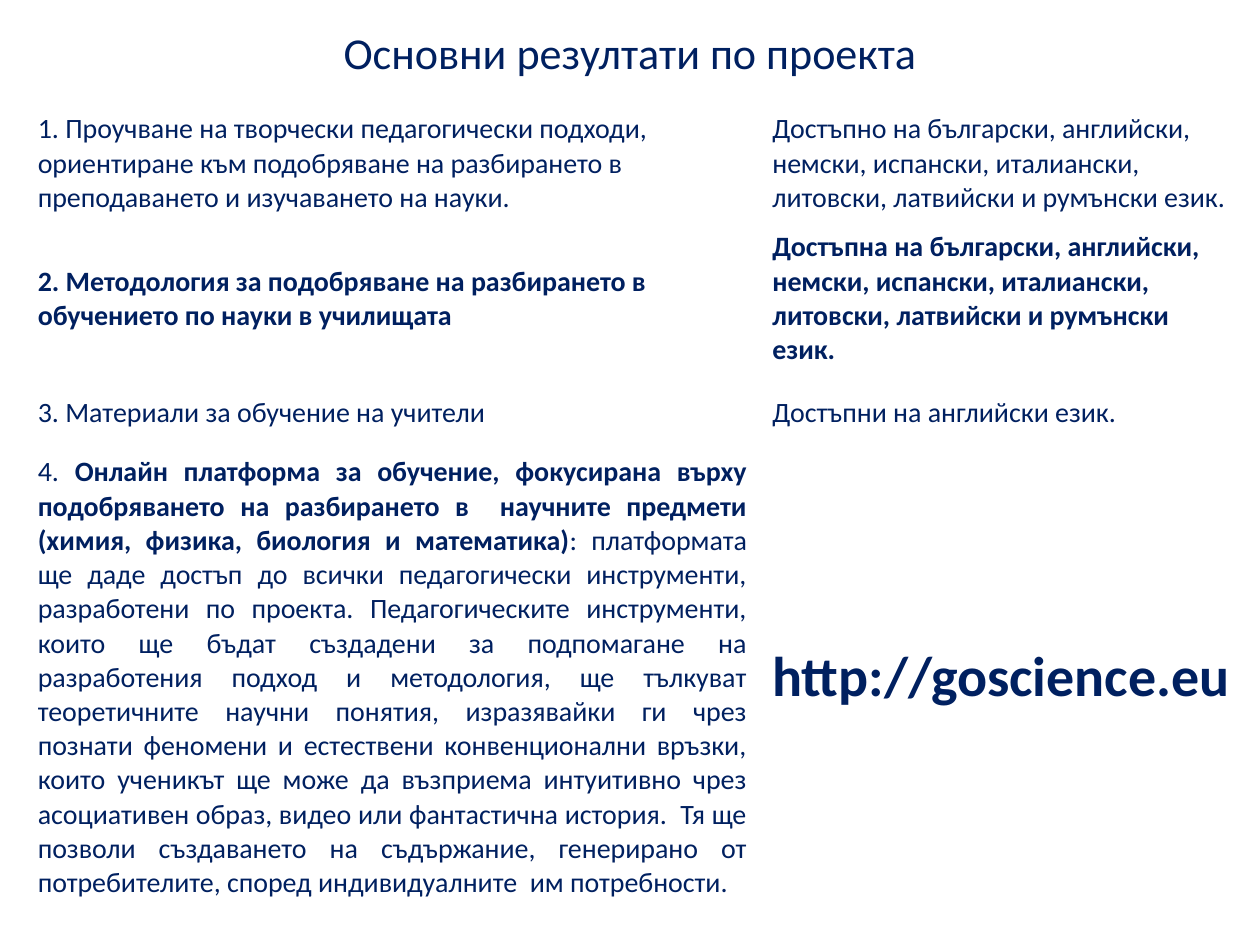
from pptx import Presentation
from pptx.dml.color import RGBColor
from pptx.enum.text import MSO_ANCHOR, PP_ALIGN
from pptx.util import Inches, Pt

NAVY = RGBColor(0x00, 0x20, 0x60)
MIDDLE = MSO_ANCHOR.MIDDLE
LEFT, CENTER, JUSTIFY = PP_ALIGN.LEFT, PP_ALIGN.CENTER, PP_ALIGN.JUSTIFY
WIDE, HIGH = Inches(10), Inches(7.5)
TITLE_ONLY = 5


def write(para, text, size=16, bold=False, align=LEFT):
    """Add one run of text to a paragraph."""
    para.alignment = align
    run = para.add_run()
    run.text = text
    font = run.font
    font.name, font.size, font.bold = "Calibri", Pt(size), bold
    font.color.rgb = NAVY


class Page:
    """Holds the slide; places are shares of its width and height."""

    def __init__(self, slide):
        self.slide = slide

    def frame(self, x, y, w, h):
        return int(x * WIDE), int(y * HIGH), int(w * WIDE), int(h * HIGH)

    def title(self, text, *place):
        box = self.slide.shapes.title
        box.left, box.top, box.width, box.height = self.frame(*place)
        box.text_frame.vertical_anchor = MIDDLE
        write(box.text_frame.paragraphs[0], text, size=25.2, align=CENTER)

    def table(self, rows, cols, highs, x, y):
        place = self.frame(x, y, sum(cols), sum(highs))
        grid = self.slide.shapes.add_table(len(rows), len(cols), *place).table
        grid.first_row = grid.horz_banding = False
        for col, share in zip(grid.columns, cols):
            col.width = int(share * WIDE)
        for row, share, cells in zip(grid.rows, highs, rows):
            row.height = int(share * HIGH)
            for cell, runs in zip(row.cells, cells):
                cell.fill.background()
                cell.vertical_anchor = MIDDLE
                for text, style in runs:
                    write(cell.text_frame.paragraphs[0], text, **style)


PLAIN, BOLD = {}, {"bold": True}
BLOCK = {"align": JUSTIFY}
TONGUES = " на български, английски, немски, испански, италиански, литовски, латвийски и румънски език."

# Each row: result, then where it can be had; a cell is a list of runs
RESULTS = [
    [[("1. Проучване на творчески педагогически подходи, ориентиране към "
       "подобряване на разбирането в  преподаването и изучаването на науки.", PLAIN)],
     [("Достъпно" + TONGUES, PLAIN)]],
    [[("2. Методология за подобряване на разбирането в обучението по науки в училищата", BOLD)],
     [("Достъпнa" + TONGUES, BOLD)]],
    [[("3. Материали за обучение на учители", PLAIN)],
     [("Достъпни на английски език.", PLAIN)]],
    [[("4. ", BLOCK),
      ("Онлайн платформа за обучение, фокусирана върху подобряването на разбирането в  "
       "научните предмети (химия, физика, биология и математика)", BLOCK | BOLD),
      (": платформата ще даде достъп до всички педагогически инструменти, разработени по "
       "проекта. Педагогическите инструменти, които ще бъдат създадени за подпомагане на "
       "разработения подход и методология, ще тълкуват теоретичните научни понятия, "
       "изразявайки ги чрез познати феномени и естествени конвенционални връзки, които "
       "ученикът ще може да възприема интуитивно чрез асоциативен образ, видео или "
       "фантастична история.  Тя ще позволи създаването на съдържание, генерирано от "
       "потребителите, според индивидуалните  им потребности.", BLOCK)],
     [("http://goscience.eu", {"size": 32, "bold": True})]],
]


def main():
    deck = Presentation()
    deck.slide_width, deck.slide_height = WIDE, HIGH
    page = Page(deck.slides.add_slide(deck.slide_layouts[TITLE_ONLY]))

    # Heading
    page.title("Основни резултати по проекта", 0.05, 0.02, 0.9, 0.07)

    # Table of results
    page.table(RESULTS, cols=[0.583, 0.386], highs=[0.12, 0.164, 0.077, 0.476],
               x=0.02, y=0.112)

    deck.save("out.pptx")


if __name__ == "__main__":
    main()
